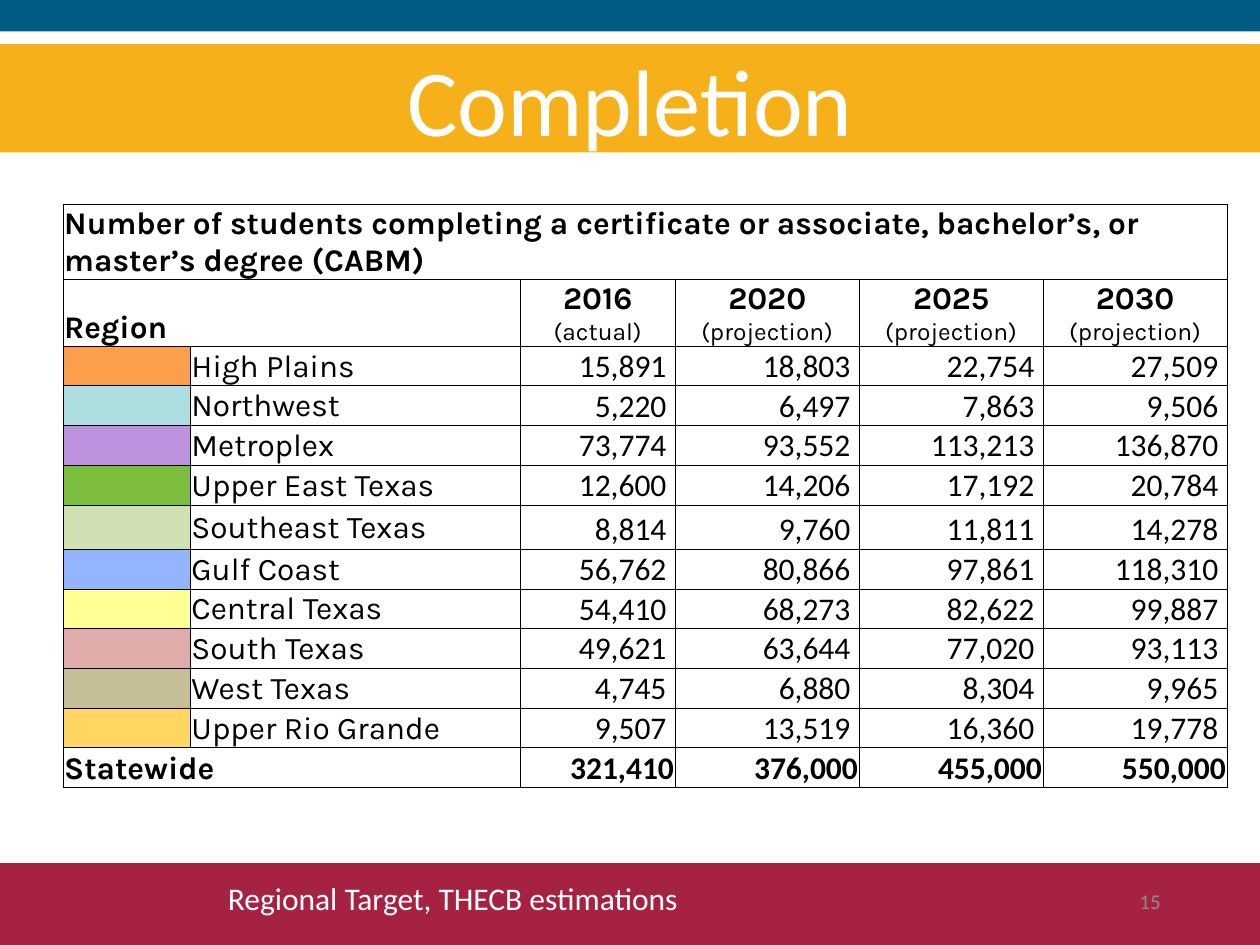
from dataclasses import dataclass

import lxml.etree
import pptx
import pptx.dml.color
import pptx.enum.shapes
import pptx.enum.text
import pptx.oxml.ns
import pptx.util
from pptx.util import Inches

ALIGN = pptx.enum.text.PP_ALIGN
ANCHOR = pptx.enum.text.MSO_ANCHOR


@dataclass(frozen=True)
class Theme:
    blue: str = "005B83"
    gold: str = "F6B11A"
    maroon: str = "A62242"
    white: str = "FFFFFF"
    black: str = "000000"
    gray: str = "8C8C8C"
    label_font: str = "Karla"
    number_font: str = "Calibri"
    title_size: int = 54
    text_size: int = 18
    note_size: int = 14
    page_size: int = 12
    border_width: float = 0.5


@dataclass(frozen=True)
class Region:
    name: str
    color: str
    counts: tuple[int, ...]


@dataclass(frozen=True)
class Style:
    font: str
    size: float
    color: str = "000000"
    bold: bool = False
    align: ALIGN = ALIGN.LEFT


THEME = Theme()
LABEL = Style(THEME.label_font, THEME.text_size)
LABEL_BOLD = Style(THEME.label_font, THEME.text_size, bold=True)
YEAR = Style(THEME.label_font, THEME.text_size, bold=True, align=ALIGN.CENTER)
YEAR_NOTE = Style(THEME.label_font, THEME.note_size, align=ALIGN.CENTER)
NUMBER = Style(THEME.number_font, THEME.text_size, align=ALIGN.RIGHT)
NUMBER_BOLD = Style(THEME.number_font, THEME.text_size, bold=True, align=ALIGN.RIGHT)

HEADING = ("Number of students completing a certificate or associate, "
           "bachelor’s, or master’s degree (CABM)")
YEARS = (("2016", "(actual)"), ("2020", "(projection)"),
         ("2025", "(projection)"), ("2030", "(projection)"))
REGIONS = (
    Region("High Plains", "FC9E4C", (15891, 18803, 22754, 27509)),
    Region("Northwest", "AEDFE0", (5220, 6497, 7863, 9506)),
    Region("Metroplex", "BD92DE", (73774, 93552, 113213, 136870)),
    Region("Upper East Texas", "7DBD3D", (12600, 14206, 17192, 20784)),
    Region("Southeast Texas", "D1E0B2", (8814, 9760, 11811, 14278)),
    Region("Gulf Coast", "93B5FF", (56762, 80866, 97861, 118310)),
    Region("Central Texas", "FFFF93", (54410, 68273, 82622, 99887)),
    Region("South Texas", "DFACA9", (49621, 63644, 77020, 93113)),
    Region("West Texas", "C5BE97", (4745, 6880, 8304, 9965)),
    Region("Upper Rio Grande", "FFD661", (9507, 13519, 16360, 19778)),
)
STATEWIDE = (321410, 376000, 455000, 550000)
COLUMN_WIDTHS = (1.01, 2.62, 1.23, 1.46, 1.46, 1.46)
ROW_HEIGHTS = (0.59, 0.53) + (0.31,) * 4 + (0.35,) + (0.31,) * 6


def rgb(color: str) -> pptx.dml.color.RGBColor:
    return pptx.dml.color.RGBColor.from_string(color)


def write(frame, *lines: tuple[str, Style]) -> None:
    """Fill a text frame with one styled paragraph per line."""
    for index, (text, style) in enumerate(lines):
        para = frame.add_paragraph() if index else frame.paragraphs[0]
        para.text = text
        para.alignment = style.align
        para.font.name = style.font
        para.font.size = pptx.util.Pt(style.size)
        para.font.bold = style.bold
        para.font.color.rgb = rgb(style.color)


def add_band(slide, top: float, height: float, color: str) -> None:
    band = slide.shapes.add_shape(pptx.enum.shapes.MSO_SHAPE.RECTANGLE,
                                  0, Inches(top), Inches(10), Inches(height))
    band.shadow.inherit = False
    band.fill.solid()
    band.fill.fore_color.rgb = rgb(color)
    band.line.fill.background()


def add_title(slide, text: str) -> None:
    title = slide.shapes.title
    title.left, title.top = Inches(0), Inches(0.35)
    title.width, title.height = Inches(10), Inches(0.86)
    title.fill.solid()
    title.fill.fore_color.rgb = rgb(THEME.gold)
    title.text_frame.auto_size = pptx.enum.text.MSO_AUTO_SIZE.NONE
    title.text_frame.vertical_anchor = ANCHOR.MIDDLE
    write(title.text_frame, (text, Style(THEME.number_font, THEME.title_size,
                                         THEME.white, align=ALIGN.CENTER)))


def add_text(slide, left: float, top: float, width: float, text: str,
             style: Style, anchor: ANCHOR) -> None:
    box = slide.shapes.add_textbox(Inches(left), Inches(top), Inches(width), Inches(0.4))
    box.text_frame.word_wrap = True
    box.text_frame.vertical_anchor = anchor
    write(box.text_frame, (text, style))


def add_borders(cell) -> None:
    properties = cell._tc.get_or_add_tcPr()
    qn = pptx.oxml.ns.qn
    for index, side in enumerate(("a:lnL", "a:lnR", "a:lnT", "a:lnB")):
        line = lxml.etree.Element(qn(side), w=str(pptx.util.Pt(THEME.border_width)))
        fill = lxml.etree.SubElement(line, qn("a:solidFill"))
        lxml.etree.SubElement(fill, qn("a:srgbClr"), val=THEME.black)
        properties.insert(index, line)


def format_cell(cell) -> None:
    cell.margin_left = cell.margin_right = cell.margin_top = Inches(0.01)
    cell.margin_bottom = 0
    cell.vertical_anchor = ANCHOR.BOTTOM
    cell.fill.background()
    add_borders(cell)


def add_completion_table(slide) -> None:
    frame = slide.shapes.add_table(len(ROW_HEIGHTS), len(COLUMN_WIDTHS), Inches(0.5), Inches(1.62),
                                   Inches(sum(COLUMN_WIDTHS)), Inches(sum(ROW_HEIGHTS)))
    table = frame.table
    table.first_row = table.horz_banding = False
    for column, width in zip(table.columns, COLUMN_WIDTHS):
        column.width = Inches(width)
    for row, height in zip(table.rows, ROW_HEIGHTS):
        row.height = Inches(height)
    for cell in table.iter_cells():
        format_cell(cell)

    # Heading and year rows
    last = len(ROW_HEIGHTS) - 1
    table.cell(0, 0).merge(table.cell(0, len(COLUMN_WIDTHS) - 1))
    write(table.cell(0, 0).text_frame, (HEADING, LABEL_BOLD))
    for row, label in ((1, "Region"), (last, "Statewide")):
        table.cell(row, 0).merge(table.cell(row, 1))
        write(table.cell(row, 0).text_frame, (label, LABEL_BOLD))
    for column, (year, note) in enumerate(YEARS, start=2):
        write(table.cell(1, column).text_frame, (year, YEAR), (note, YEAR_NOTE))

    # Region rows
    for row, region in enumerate(REGIONS, start=2):
        swatch, name = table.cell(row, 0), table.cell(row, 1)
        swatch.fill.solid()
        swatch.fill.fore_color.rgb = rgb(region.color)
        name.vertical_anchor = ANCHOR.MIDDLE
        write(name.text_frame, (region.name, LABEL))
        for column, count in enumerate(region.counts, start=2):
            cell = table.cell(row, column)
            cell.margin_right = Inches(0.07)
            write(cell.text_frame, (f"{count:,}", NUMBER))

    # Statewide totals
    for column, count in enumerate(STATEWIDE, start=2):
        write(table.cell(last, column).text_frame, (f"{count:,}", NUMBER_BOLD))


def main() -> None:
    deck = pptx.Presentation()
    deck.slide_width, deck.slide_height = Inches(10), Inches(7.5)
    slide = deck.slides.add_slide(deck.slide_layouts.get_by_name("Title Only"))

    # Bands and title
    add_band(slide, 6.85, 0.67, THEME.maroon)
    add_band(slide, 0, 0.25, THEME.blue)
    add_title(slide, "Completion")

    add_completion_table(slide)

    # Footer
    add_text(slide, 1.71, 6.93, 6.59, "Regional Target, THECB estimations",
             Style(THEME.number_font, THEME.text_size, THEME.white), ANCHOR.TOP)
    add_text(slide, 7.06, 6.95, 2.25, "15",
             Style(THEME.number_font, THEME.page_size, THEME.gray, align=ALIGN.RIGHT),
             ANCHOR.MIDDLE)
    deck.save("out.pptx")


if __name__ == "__main__":
    main()
